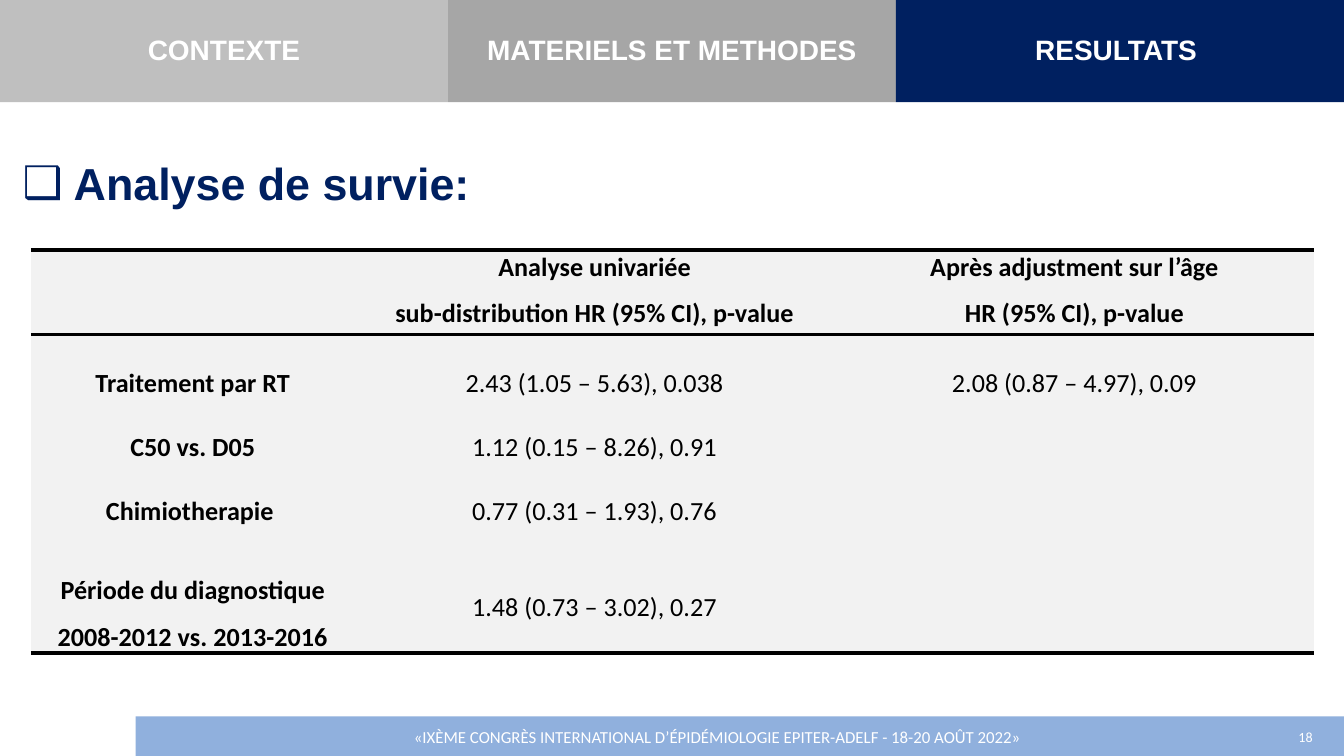
"""Build the survival analysis results slide."""
from lxml import etree
from pptx import Presentation
from pptx.dml.color import RGBColor
from pptx.enum.shapes import MSO_SHAPE
from pptx.enum.text import MSO_ANCHOR, PP_ALIGN
from pptx.oxml.ns import qn
from pptx.util import Inches, Pt

RECTANGLE = MSO_SHAPE.RECTANGLE
TOP, MIDDLE, BOTTOM = MSO_ANCHOR.TOP, MSO_ANCHOR.MIDDLE, MSO_ANCHOR.BOTTOM
LEFT, CENTER, RIGHT = PP_ALIGN.LEFT, PP_ALIGN.CENTER, PP_ALIGN.RIGHT
WHITE, BLACK, NAVY = "FFFFFF", "000000", "002060"


def rgb(value):
    return RGBColor.from_string(value)


def write(paragraph, text, size, font, color, bold=False, align=CENTER):
    paragraph.alignment = align
    run = paragraph.add_run()
    run.text = text
    run.font.size = Pt(size)
    run.font.name = font
    run.font.bold = bold
    run.font.color.rgb = rgb(color)


prs = Presentation()
prs.slide_width, prs.slide_height = Inches(10), Inches(10 * 9 / 16)
slide = prs.slides.add_slide(prs.slide_layouts[6])
shapes = slide.shapes

tab_width = 10 / 3
bands = [
    (1.01, 5.33, 8.99, 0.3, "90B0DD", ""),
    (0, -0.03, tab_width, 0.79, "BFBFBF", "CONTEXTE"),
    (tab_width, -0.03, tab_width, 0.79, "A6A6A6", "MATERIELS ET METHODES"),
    (2 * tab_width, -0.03, tab_width, 0.79, NAVY, "RESULTATS "),
]
for left, top, width, height, color, label in bands:
    band = shapes.add_shape(RECTANGLE, Inches(left), Inches(top), Inches(width), Inches(height))
    band.shadow.inherit = False
    band.fill.solid()
    band.fill.fore_color.rgb = rgb(color)
    band.line.fill.background()
    if label:
        band.text_frame.vertical_anchor = MIDDLE
        write(band.text_frame.paragraphs[0], label, 15, "Arial", WHITE, True)

heading = shapes.add_textbox(Inches(0.07), Inches(1.11), Inches(9.37), Inches(0.5)).text_frame
heading.word_wrap = True
heading.vertical_anchor = MIDDLE
title = heading.paragraphs[0]
title_format = title._p.get_or_add_pPr()
title_format.set("marL", str(Inches(0.38)))
title_format.set("indent", str(-Inches(0.38)))
etree.SubElement(title_format, qn("a:buFont"), typeface="Arial")
etree.SubElement(title_format, qn("a:buChar"), char="❑")
write(title, "Analyse de survie:", 24, "Arial", NAVY, True, LEFT)

congress = "«IXÈME CONGRÈS INTERNATIONAL D’ÉPIDÉMIOLOGIE EPITER-ADELF - 18-20 AOÛT 2022»"
footers = [(0.93, 6.66, congress, 9, RIGHT), (9.43, 0.57, "18", 7.5, CENTER)]
for left, width, text, size, align in footers:
    footer = shapes.add_textbox(Inches(left), Inches(5.33), Inches(width), Inches(0.3)).text_frame
    footer.word_wrap = True
    footer.vertical_anchor = MIDDLE
    footer.margin_left = footer.margin_right = 0
    write(footer.paragraphs[0], text, size, "Calibri", WHITE, align=align)

results = [
    ("", "Analyse univariée\nsub-distribution HR (95% CI), p-value",
     "Après adjustment sur l’âge\nHR (95% CI), p-value"),
    ("Traitement par RT", "2.43 (1.05 – 5.63), 0.038", "2.08 (0.87 – 4.97), 0.09"),
    ("C50 vs. D05", "1.12 (0.15 – 8.26), 0.91", ""),
    ("Chimiotherapie ", "0.77 (0.31 – 1.93), 0.76", ""),
    ("Période du diagnostique\n2008-2012 vs. 2013-2016", "1.48 (0.73 – 3.02), 0.27", ""),
]
row_heights = [0.63, 0.47, 0.47, 0.47, 0.94]
line_spacings = [1, 2, 2, 2, 3]
last = len(results) - 1
table = shapes.add_table(len(results), 3, Inches(0.23), Inches(1.86),
                         Inches(9.55), Inches(sum(row_heights))).table
table.first_row = table.horz_banding = False
for column, width in zip(table.columns, (2.41, 3.57, 3.57)):
    column.width = Inches(width)

for r, values in enumerate(results):
    table.rows[r].height = Inches(row_heights[r])
    ruled_sides = {"T": r in (0, 1), "B": r in (0, last)}
    for c, value in enumerate(values):
        cell = table.cell(r, c)
        cell_format = cell._tc.get_or_add_tcPr()
        for side in "LRTB":
            border = etree.SubElement(cell_format, qn(f"a:ln{side}"), w=str(Pt(2.25)))
            if ruled_sides.get(side):
                ink = etree.SubElement(border, qn("a:solidFill"))
                etree.SubElement(ink, qn("a:srgbClr"), val=BLACK)
            else:
                etree.SubElement(border, qn("a:noFill"))
        cell.fill.solid()
        cell.fill.fore_color.rgb = rgb("F2F2F2")
        if not value:
            continue
        cell.margin_left = cell.margin_right = Inches(0.07)
        cell.margin_top, cell.margin_bottom = Inches(0.01), 0
        lines = value.split("\n")
        cell.vertical_anchor = BOTTOM if r == last and c == 0 else TOP
        for i, line in enumerate(lines):
            paragraph = cell.text_frame.add_paragraph() if i else cell.text_frame.paragraphs[0]
            paragraph.space_after = Pt(8)
            paragraph.line_spacing = 1.0 if len(lines) > 1 else float(line_spacings[r])
            write(paragraph, line, 14, "Calibri", BLACK, r == 0 or c == 0)

prs.save("out.pptx")
